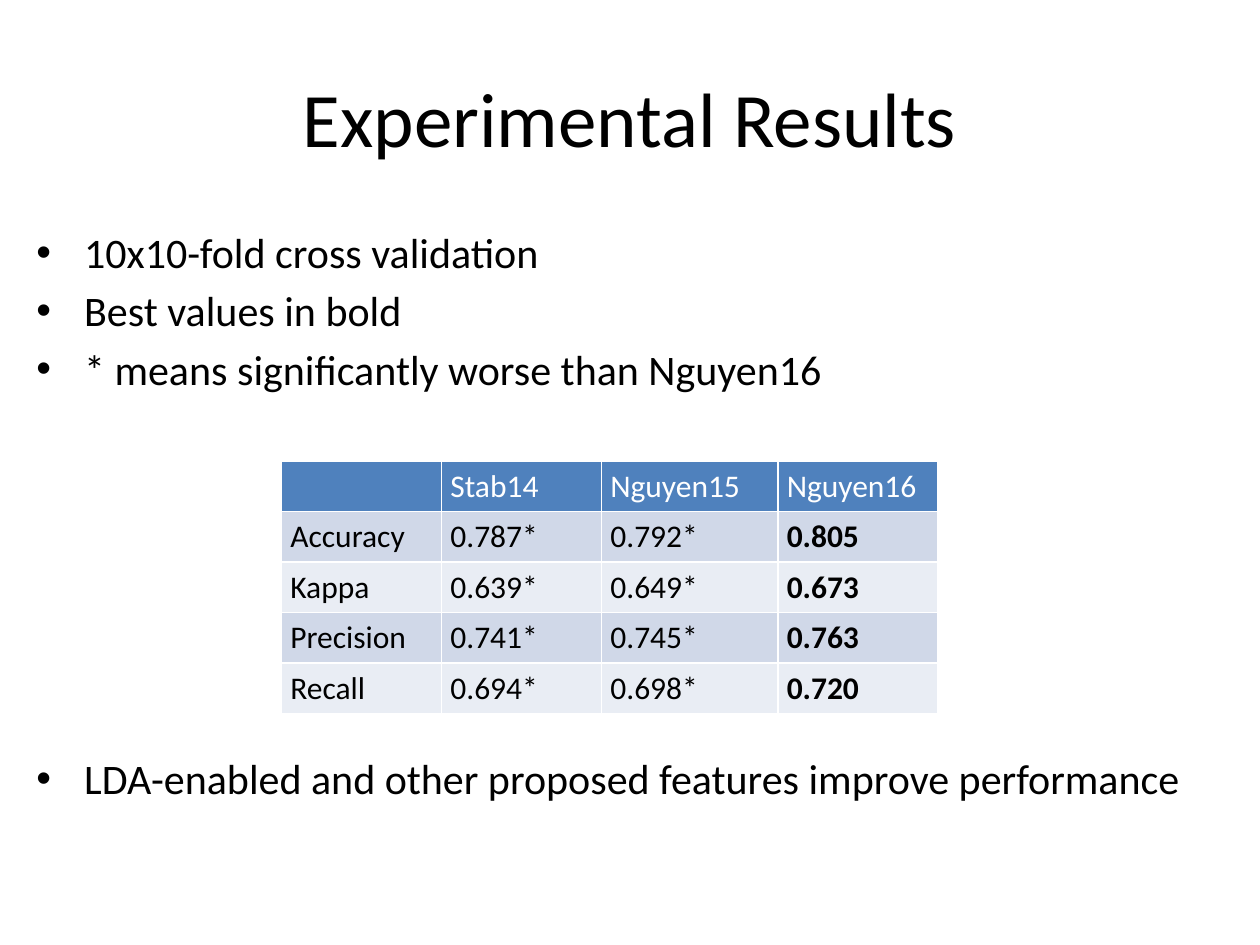
import dataclasses

import pptx
import pptx.dml.color
import pptx.enum.text
import pptx.oxml
import pptx.oxml.ns
import pptx.util

Inches = pptx.util.Inches
Pt = pptx.util.Pt
Color = pptx.dml.color.RGBColor.from_string

SLIDE_WIDTH, SLIDE_HEIGHT = Inches(10), Inches(7.5)


@dataclasses.dataclass(frozen=True)
class Theme:
    font: str = "Calibri"
    text: str = "000000"
    header_text: str = "FFFFFF"
    header_fill: str = "4F81BD"
    band_fills: tuple[str, str] = ("D0D8E8", "E9EDF4")
    border: str = "FFFFFF"
    title_size: int = 44
    bullet_size: int = 24
    table_size: int = 18


@dataclasses.dataclass(frozen=True)
class Box:
    """A rectangle in shares of the slide's width and height."""
    left: float
    top: float
    width: float
    height: float

    def place(self, shape) -> None:
        shape.left, shape.top, shape.width, shape.height = self.lengths()

    def lengths(self) -> tuple[int, int, int, int]:
        return (int(self.left * SLIDE_WIDTH), int(self.top * SLIDE_HEIGHT),
                int(self.width * SLIDE_WIDTH), int(self.height * SLIDE_HEIGHT))


@dataclasses.dataclass(frozen=True)
class Bullet:
    text: str
    space_before: float = 4.5


THEME = Theme()
TITLE_BOX = Box(0.05, 0.04, 0.9, 1 / 6)
BULLET_BOX = Box(0.019, 0.2333, 0.957, 0.66)
TABLE_BOX = Box(0.2235, 0.488, 0.521, 0.267)
COLUMN_SHARES = (0.127, 0.127, 0.14, 0.127)

BULLETS = (
    Bullet("10x10-fold cross validation", 0),
    Bullet("Best values in bold"),
    Bullet("* means significantly worse than Nguyen16"),
    # The last bullet stands below the table
    Bullet("LDA-enabled and other proposed features improve performance", 205),
)
RESULTS = (
    ("", "Stab14", "Nguyen15", "Nguyen16"),
    ("Accuracy", "0.787*", "0.792*", "0.805"),
    ("Kappa", "0.639*", "0.649*", "0.673"),
    ("Precision", "0.741*", "0.745*", "0.763"),
    ("Recall", "0.694*", "0.698*", "0.720"),
)


def set_font(paragraph, size: int, color: str, bold: bool = False) -> None:
    font = paragraph.font
    font.name, font.size, font.bold = THEME.font, Pt(size), bold
    font.color.rgb = Color(color)


def add_title(slide, text: str) -> None:
    title = slide.shapes.title
    TITLE_BOX.place(title)
    title.text_frame.text = text
    title.text_frame.vertical_anchor = pptx.enum.text.MSO_ANCHOR.MIDDLE
    paragraph = title.text_frame.paragraphs[0]
    paragraph.alignment = pptx.enum.text.PP_ALIGN.CENTER
    set_font(paragraph, THEME.title_size, THEME.text)


def add_bullets(slide, bullets: tuple[Bullet, ...]) -> None:
    frame = slide.shapes.add_textbox(*BULLET_BOX.lengths()).text_frame
    frame.word_wrap = True
    for index, bullet in enumerate(bullets):
        paragraph = frame.add_paragraph() if index else frame.paragraphs[0]
        paragraph.text = bullet.text
        paragraph.space_before = Pt(bullet.space_before)
        properties = paragraph._p.get_or_add_pPr()
        properties.set("marL", str(Inches(0.38)))
        properties.set("indent", str(-Inches(0.38)))
        for tag, name, value in (("buFont", "typeface", "Arial"), ("buChar", "char", "•")):
            element = pptx.oxml.ns.qn(f"a:{tag}")
            properties.append(properties.makeelement(element, {name: value}))
        set_font(paragraph, THEME.bullet_size, THEME.text)


def add_borders(cell) -> None:
    properties = cell._tc.get_or_add_tcPr()
    for side in "LRTB":
        properties.append(pptx.oxml.parse_xml(
            f'<a:ln{side} {pptx.oxml.ns.nsdecls("a")} w="{Pt(1)}"><a:solidFill>'
            f'<a:srgbClr val="{THEME.border}"/></a:solidFill></a:ln{side}>'))


def add_results(slide, rows: tuple[tuple[str, ...], ...]) -> None:
    table = slide.shapes.add_table(len(rows), len(rows[0]), *TABLE_BOX.lengths()).table
    for column, share in zip(table.columns, COLUMN_SHARES):
        column.width = int(share * SLIDE_WIDTH)
    for row_index, row in enumerate(rows):
        is_header = row_index == 0
        fill = THEME.header_fill if is_header else THEME.band_fills[(row_index - 1) % 2]
        color = THEME.header_text if is_header else THEME.text
        for column_index, text in enumerate(row):
            cell = table.cell(row_index, column_index)
            cell.text = text
            cell.margin_left = cell.margin_right = Inches(0.07)
            cell.margin_top = cell.margin_bottom = Inches(0.05)
            add_borders(cell)
            cell.fill.solid()
            cell.fill.fore_color.rgb = Color(fill)
            is_best = not is_header and column_index == len(row) - 1
            set_font(cell.text_frame.paragraphs[0], THEME.table_size, color, is_best)


def main() -> None:
    presentation = pptx.Presentation()
    presentation.slide_width, presentation.slide_height = SLIDE_WIDTH, SLIDE_HEIGHT
    # Title-only layout
    slide = presentation.slides.add_slide(presentation.slide_layouts[5])
    add_title(slide, "Experimental Results")
    add_bullets(slide, BULLETS)
    add_results(slide, RESULTS)
    presentation.save("out.pptx")


if __name__ == "__main__":
    main()
